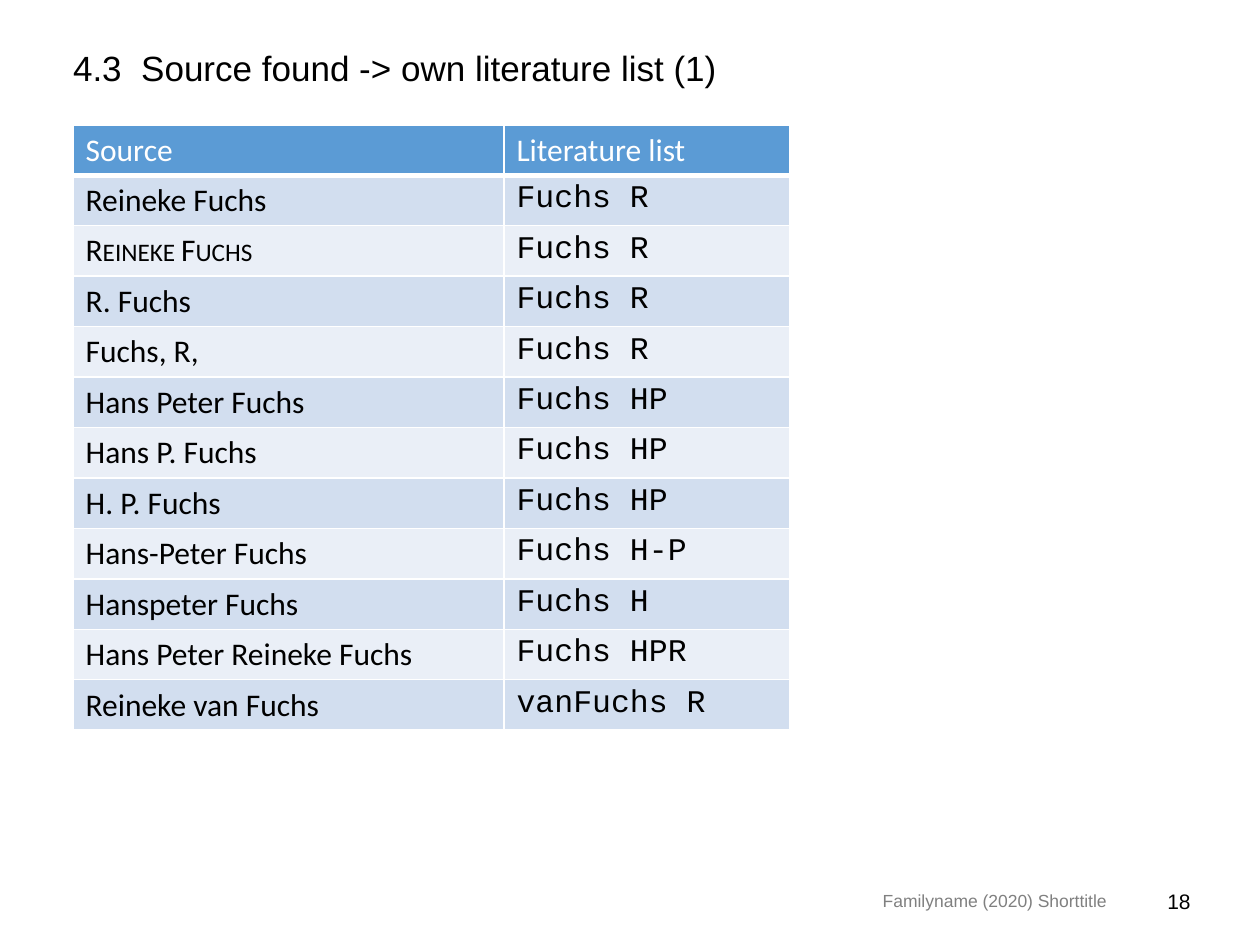
from dataclasses import dataclass

from lxml.etree import SubElement
from pptx import Presentation
from pptx.dml.color import RGBColor
from pptx.enum.text import MSO_ANCHOR, MSO_AUTO_SIZE, PP_ALIGN
from pptx.oxml.ns import qn
from pptx.util import Inches, Pt


@dataclass(frozen=True)
class Theme:
    sans: str = "Arial"
    body: str = "Calibri"
    mono: str = "Courier New"
    black: str = "000000"
    white: str = "FFFFFF"
    grey: str = "808080"
    header: str = "5B9BD5"
    bands: tuple = ("D2DEEF", "EAEFF7")
    title_size: int = 20
    table_size: int = 18
    number_size: int = 12
    footer_size: int = 10


ROWS = [
    ("Reineke Fuchs", "Fuchs R"),
    ("Reineke Fuchs", "Fuchs R"),
    ("R. Fuchs", "Fuchs R"),
    ("Fuchs, R,", "Fuchs R"),
    ("Hans Peter Fuchs", "Fuchs HP"),
    ("Hans P. Fuchs", "Fuchs HP"),
    ("H. P. Fuchs", "Fuchs HP"),
    ("Hans-Peter Fuchs", "Fuchs H-P"),
    ("Hanspeter Fuchs", "Fuchs H"),
    ("Hans Peter Reineke Fuchs", "Fuchs HPR"),
    ("Reineke van Fuchs", "vanFuchs R"),
]
SMALL_CAPS_ROW = 2


class SlideBuilder:
    def __init__(self, prs, theme):
        self.theme = theme
        self.s = prs.slides.add_slide(prs.slide_layouts[5])

    def style(self, p, font, size, color):
        p.font.name = font
        p.font.size = Pt(size)
        p.font.bold = False
        p.font.color.rgb = RGBColor.from_string(color)

    def title(self, text, left, top, width, height):
        sp = self.s.shapes.title
        sp.left, sp.top = Inches(left), Inches(top)
        sp.width, sp.height = Inches(width), Inches(height)
        tf = sp.text_frame
        tf.text = text
        tf.auto_size = MSO_AUTO_SIZE.NONE
        tf.vertical_anchor = MSO_ANCHOR.BOTTOM
        tf.margin_left = 0
        p = tf.paragraphs[0]
        p.alignment = PP_ALIGN.LEFT
        p.line_spacing = 0.9
        self.style(p, self.theme.sans, self.theme.title_size, self.theme.black)

    def footer(self, text, left, top, width, height, size, color, margin_right=0.1):
        sp = self.s.shapes.add_textbox(
            Inches(left), Inches(top), Inches(width), Inches(height))
        tf = sp.text_frame
        tf.word_wrap = True
        tf.vertical_anchor = MSO_ANCHOR.MIDDLE
        tf.margin_right = Inches(margin_right)
        tf.text = text
        p = tf.paragraphs[0]
        p.alignment = PP_ALIGN.RIGHT
        self.style(p, self.theme.sans, size, color)

    def borders(self, cell, bottom):
        tcPr = cell._tc.get_or_add_tcPr()
        for side, width in (("L", 1), ("R", 1), ("T", 1), ("B", bottom)):
            ln = SubElement(tcPr, qn(f"a:ln{side}"), w=str(Pt(width)))
            fill = SubElement(ln, qn("a:solidFill"))
            SubElement(fill, qn("a:srgbClr"), val=self.theme.white)

    def cell(self, cell, text, font, color, fill, bottom=1):
        cell.text = text
        self.style(cell.text_frame.paragraphs[0], font, self.theme.table_size, color)
        self.borders(cell, bottom)
        cell.fill.solid()
        cell.fill.fore_color.rgb = RGBColor.from_string(fill)

    def table(self, headings, rows, left, top, widths, row_height):
        t = self.theme
        count = len(rows) + 1
        table = self.s.shapes.add_table(
            count, len(widths), Inches(left), Inches(top),
            Inches(sum(widths)), Inches(row_height * count)).table
        for column, width in zip(table.columns, widths):
            column.width = Inches(width)
        for row in table.rows:
            row.height = Inches(row_height)
        for j, text in enumerate(headings):
            self.cell(table.cell(0, j), text, t.body, t.white, t.header, bottom=3)
        for i, row in enumerate(rows, start=1):
            for j, (text, font) in enumerate(zip(row, (t.body, t.mono))):
                self.cell(table.cell(i, j), text, font, t.black, t.bands[(i - 1) % 2])
        return table

    def small_caps(self, cell):
        r = cell.text_frame.paragraphs[0].runs[0]
        r._r.get_or_add_rPr().set("cap", "small")


def main():
    prs = Presentation()
    prs.slide_width, prs.slide_height = Inches(10), Inches(7.5)
    theme = Theme()
    slide = SlideBuilder(prs, theme)
    slide.title("4.3  Source found -> own literature list (1)", 0.58, 0.17, 7.94, 0.59)
    slide.footer("18", 8.88, 6.95, 0.57, 0.4, theme.number_size, theme.black,
                 margin_right=0)
    slide.footer("Familyname (2020) Shorttitle", 5.27, 6.95, 3.61, 0.4,
                 theme.footer_size, theme.grey)
    table = slide.table(("Source", "Literature list"), ROWS, 0.58, 0.99,
                        (3.42, 2.27), 0.4)
    slide.small_caps(table.cell(SMALL_CAPS_ROW, 0))
    prs.save("out.pptx")


if __name__ == "__main__":
    main()
